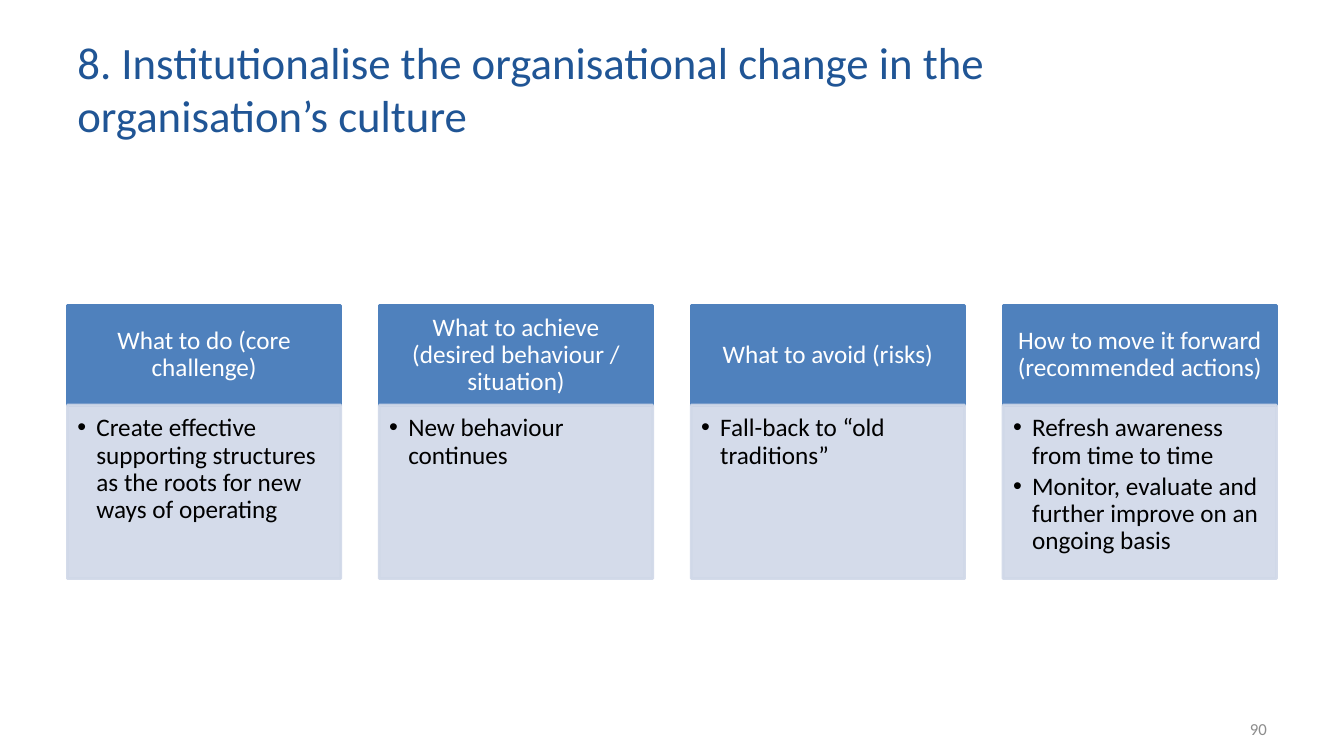
from lxml.etree import SubElement
from pptx import Presentation
from pptx.dml.color import RGBColor
from pptx.enum.shapes import MSO_SHAPE as SHAPE
from pptx.enum.text import MSO_ANCHOR as ANCHOR, MSO_AUTO_SIZE as AUTOSIZE, PP_ALIGN as ALIGN
from pptx.oxml.ns import qn
from pptx.util import Cm, Pt

TITLE = "8. Institutionalise the organisational change in the organisation’s culture"
COLUMNS = [
    ("What to do (core challenge)",
     ["Create effective supporting structures as the roots for new ways of operating"]),
    ("What to achieve (desired behaviour / situation)",
     ["New behaviour continues"]),
    ("What to avoid (risks)",
     ["Fall-back to “old traditions”"]),
    ("How to move it forward (recommended actions)",
     ["Refresh awareness from time to time",
      "Monitor, evaluate and further improve on an ongoing basis"]),
]
PAGE = "90"

FONT = "Calibri"
COLORS = {"title": "205595", "head": "4F81BD", "body": "D0D8E8",
          "head_text": "FFFFFF", "body_text": "000000", "page": "8C8C8C"}

# Lengths in cm
LEFT, PITCH, WIDTH = 1.7, 7.86, 6.89
HEAD_TOP, HEAD_H, BODY_H = 7.69, 2.52, 4.37
INDENT = 0.48

# Insets: left, top, right, bottom
HEAD_FRAME = {"anchor": ANCHOR.MIDDLE, "insets": (0.36, 0.2, 0.36, 0.2)}
BODY_FRAME = {"anchor": ANCHOR.TOP, "insets": (0.25, 0.25, 0.36, 0.41)}
LINE_FRAME = {"anchor": ANCHOR.MIDDLE, "insets": (0.25, 0.13, 0.25, 0.13)}
HEAD_PARA = {"alignment": ALIGN.CENTER, "line_spacing": 0.9}
BODY_PARA = {"alignment": ALIGN.LEFT, "line_spacing": 0.9, "space_after": Pt(2.7)}


def rgb(name):
    return RGBColor.from_string(COLORS[name])


def add_bullet(p):
    pPr = p._p.get_or_add_pPr()
    pPr.set("marL", str(Cm(INDENT)))
    pPr.set("indent", str(-Cm(INDENT)))
    SubElement(pPr, qn("a:buFont"), typeface="Arial")
    SubElement(pPr, qn("a:buChar"), char="•")


def write(s, lines, frame, para, size, color, bullets=False):
    tf = s.text_frame
    tf.word_wrap = True
    tf.auto_size = AUTOSIZE.NONE
    tf.vertical_anchor = frame["anchor"]
    for side, inset in zip(("left", "top", "right", "bottom"), frame["insets"]):
        setattr(tf, f"margin_{side}", Cm(inset))
    for i, line in enumerate(lines):
        p = tf.add_paragraph() if i else tf.paragraphs[0]
        if bullets:
            add_bullet(p)
        for key, value in para.items():
            setattr(p, key, value)
        r = p.add_run()
        r.text = line
        r.font.name, r.font.size = FONT, Pt(size)
        r.font.color.rgb = rgb(color)


def add_box(slide, left, top, height, color, opacity=100):
    s = slide.shapes.add_shape(SHAPE.RECTANGLE, Cm(left), Cm(top), Cm(WIDTH), Cm(height))
    s.shadow.inherit = False
    s.line.width = Pt(2)
    s.fill.solid()
    for fill in (s.fill, s.line.fill):
        fill.solid()
        fill.fore_color.rgb = rgb(color)
    if opacity < 100:
        for clr in s._element.spPr.iter(qn("a:srgbClr")):
            SubElement(clr, qn("a:alpha"), val=str(opacity * 1000))
    return s


def main():
    prs = Presentation()
    prs.slide_width, prs.slide_height = Cm(33.87), Cm(19.05)
    slide = prs.slides.add_slide(prs.slide_layouts[5])

    title = slide.shapes.title
    title.left, title.top, title.width, title.height = Cm(LEFT), Cm(0.76), Cm(25.17), Cm(2.92)
    write(title, [TITLE], LINE_FRAME, {"alignment": ALIGN.LEFT}, 32, "title")

    for i, (heading, points) in enumerate(COLUMNS):
        left = LEFT + i * PITCH
        head = add_box(slide, left, HEAD_TOP, HEAD_H, "head")
        write(head, [heading], HEAD_FRAME, HEAD_PARA, 18, "head_text")
        body = add_box(slide, left, HEAD_TOP + HEAD_H, BODY_H, "body", opacity=90)
        write(body, points, BODY_FRAME, BODY_PARA, 18, "body_text", bullets=True)

    page = slide.shapes.add_textbox(Cm(24.28), Cm(17.86), Cm(7.9), Cm(1.02))
    write(page, [PAGE], LINE_FRAME, {"alignment": ALIGN.RIGHT}, 12, "page")

    prs.save("out.pptx")


if __name__ == "__main__":
    main()
